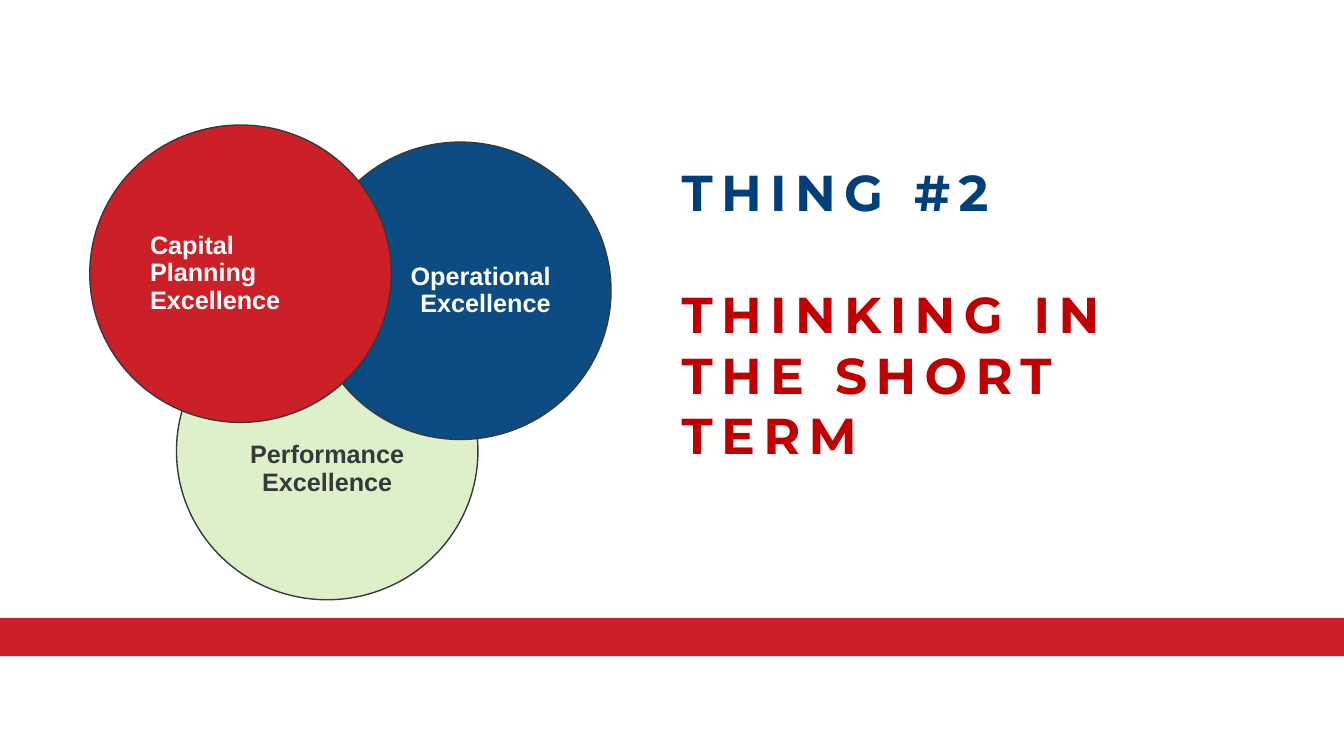
from pptx import Presentation
from pptx import util as u
from pptx.dml.color import RGBColor
from pptx.enum import shapes, text
from pptx.oxml.ns import qn
from lxml import etree

W, H = 13.33, 7.5
CIRCLE_W, CIRCLE_H = 2.99, 2.95
INSET = 0.16
COLORS = {
    "red": "CB2027",
    "blue": "0D4C82",
    "green": "92D050",
    "navy": "013F7A",
    "crimson": "C00000",
    "dark": "36393B",
    "white": "FFFFFF",
}


def color(name):
    return RGBColor.from_string(COLORS[name])


def add_run(p, content, font, size, ink):
    r = p.add_run()
    r.text = content
    r.font.name = font
    r.font.size = u.Pt(size)
    r.font.bold = True
    r.font.color.rgb = color(ink)
    return r


def set_frame(tf, anchor, inset, top):
    tf.word_wrap = True
    tf.vertical_anchor = anchor
    tf.margin_left = tf.margin_right = tf.margin_bottom = u.Inches(inset)
    tf.margin_top = u.Inches(top)


def add_filled(s, kind, box, fill):
    sp = s.shapes.add_shape(kind, *(u.Inches(v) for v in box))
    sp.shadow.inherit = False
    sp.fill.solid()
    sp.fill.fore_color.rgb = color(fill)
    return sp


def add_band(s, top, height):
    sp = add_filled(s, shapes.MSO_SHAPE.RECTANGLE, (0, top, W, height), "red")
    sp.line.fill.background()


def add_circle(s, left, top, label, fill, ink, align, opacity=100, drop=0):
    box = (left, top, CIRCLE_W, CIRCLE_H)
    sp = add_filled(s, shapes.MSO_SHAPE.OVAL, box, fill)
    if opacity < 100:
        rgb = sp.fill._xPr.find(qn("a:solidFill"))[0]
        etree.SubElement(rgb, qn("a:alpha")).set("val", str(opacity * 1000))
    sp.line.color.rgb = color("dark")
    sp.line.width = u.Pt(1)
    tf = sp.text_frame
    set_frame(tf, text.MSO_ANCHOR.MIDDLE, INSET, INSET + drop)
    p = tf.paragraphs[0]
    p.alignment = align
    p.line_spacing = 0.9
    add_run(p, label, "Arial", 18, ink)


def add_title(s, left, top, width, height, lines):
    box = (u.Inches(v) for v in (left, top, width, height))
    tf = s.shapes.add_textbox(*box).text_frame
    set_frame(tf, text.MSO_ANCHOR.BOTTOM, 0, 0)
    for i, (content, ink) in enumerate(lines):
        p = tf.add_paragraph() if i else tf.paragraphs[0]
        if i:
            p.space_before = u.Pt(44)
        r = add_run(p, content, "Montserrat", 36, ink)
        r._r.get_or_add_rPr().set("spc", "600")


def main():
    prs = Presentation()
    prs.slide_width, prs.slide_height = u.Inches(W), u.Inches(H)
    s = prs.slides.add_slide(prs.slide_layouts[6])
    align = text.PP_ALIGN
    add_band(s, 6.13, 0.38)
    add_title(s, 6.76, 1.88, 5.29, 2.73, [
        ("THING #2", "navy"),
        ("THINKING IN THE SHORT TERM", "crimson"),
    ])
    add_circle(s, 1.75, 3, "Performance Excellence", "green", "dark",
               align.CENTER, opacity=30, drop=0.36)
    add_circle(s, 3.07, 1.41, "Operational Excellence", "blue", "white",
               align.RIGHT)
    add_circle(s, 0.89, 1.24, "Capital Planning Excellence", "red", "white",
               align.LEFT)
    prs.save("out.pptx")


if __name__ == "__main__":
    main()
